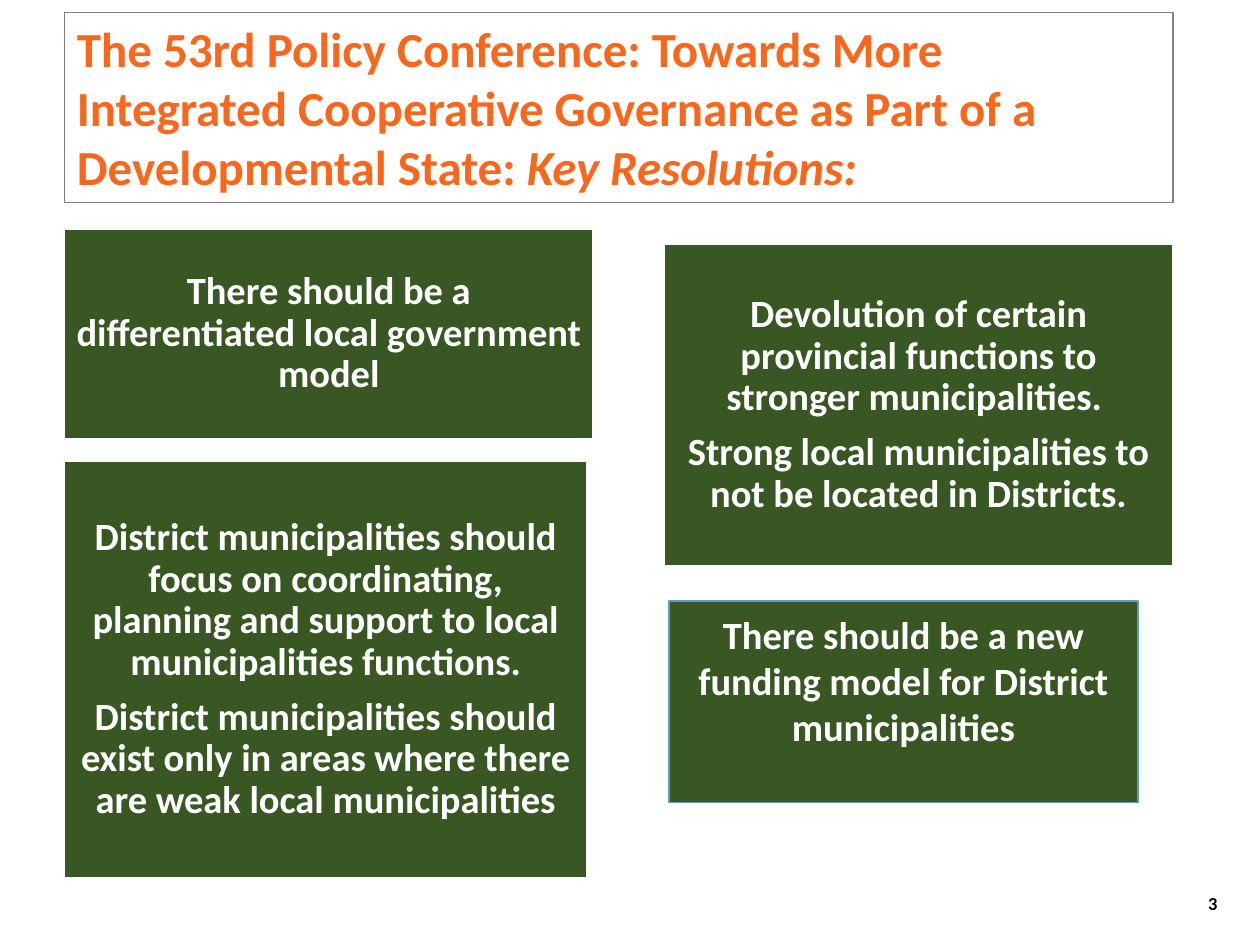
from dataclasses import dataclass

from pptx import Presentation
from pptx.dml.color import RGBColor
from pptx.enum.shapes import MSO_SHAPE
from pptx.enum.text import MSO_ANCHOR, MSO_AUTO_SIZE, PP_ALIGN
from pptx.util import Inches, Pt

RECTANGLE = MSO_SHAPE.RECTANGLE
TOP, MIDDLE = MSO_ANCHOR.TOP, MSO_ANCHOR.MIDDLE
LEFT, CENTER, RIGHT = PP_ALIGN.LEFT, PP_ALIGN.CENTER, PP_ALIGN.RIGHT
TITLE_ONLY = 5


@dataclass(frozen=True)
class Theme:
    font: str = "Calibri"
    title_size: float = 28
    body_size: float = 22
    number_size: float = 10.5
    orange: RGBColor = RGBColor(0xF9, 0x67, 0x1C)
    green: RGBColor = RGBColor(0x38, 0x57, 0x23)
    blue: RGBColor = RGBColor(0x5B, 0x9B, 0xD5)
    gray: RGBColor = RGBColor(0x80, 0x80, 0x80)
    white: RGBColor = RGBColor(0xFF, 0xFF, 0xFF)
    black: RGBColor = RGBColor(0, 0, 0)


THEME = Theme()
MARGIN = 0.51
RIGHT_COLUMN = 5.27

# Position (left, top, width, height) and paragraphs of each resolution
RESOLUTIONS = [
    ((MARGIN, 1.82, 4.2, 1.66),
     ["There should be a differentiated local government model"]),
    ((RIGHT_COLUMN, 1.94, 4.04, 2.55),
     ["Devolution of certain provincial functions to stronger municipalities. ",
      "Strong local municipalities to not be located in Districts."]),
    ((MARGIN, 3.66, 4.15, 3.31),
     ["District municipalities should focus on coordinating, planning and "
      "support to local municipalities functions.",
      "District municipalities should exist only in areas where there are "
      "weak local municipalities"]),
]
FUNDING = ((5.31, 4.77, 3.72, 1.6),
           ["There should be a new funding model for District municipalities"])


def add_span(para, text, size, color, italic=None):
    span = para.add_run()
    span.text = text
    font = span.font
    font.name, font.size, font.bold, font.italic = THEME.font, Pt(size), True, italic
    font.color.rgb = color


def set_frame(frame, anchor, inset=None):
    frame.word_wrap = True
    frame.auto_size = MSO_AUTO_SIZE.NONE
    frame.vertical_anchor = anchor
    if inset is not None:
        frame.margin_left = frame.margin_right = Inches(inset)
        frame.margin_top = frame.margin_bottom = Inches(inset)


def set_title(page):
    title = page.shapes.title
    title.left, title.top = Inches(MARGIN), Inches(0.1)
    title.width, title.height = Inches(8.8), Inches(1.51)
    title.line.color.rgb = THEME.gray
    title.line.width = Pt(0.75)
    set_frame(title.text_frame, TOP)
    para = title.text_frame.paragraphs[0]
    para.alignment = LEFT
    add_span(para, "The 53rd Policy Conference: Towards More Integrated Cooperative "
             "Governance as Part of a Developmental State: ",
             THEME.title_size, THEME.orange)
    add_span(para, "Key Resolutions:", THEME.title_size, THEME.orange, italic=True)


def add_resolution(page, place, texts, line_color=THEME.white, anchor=MIDDLE,
                   inset=0.09, line_spacing=0.9):
    box = page.shapes.add_shape(RECTANGLE, *map(Inches, place))
    box.shadow.inherit = False
    box.fill.solid()
    box.fill.fore_color.rgb = THEME.green
    box.line.color.rgb = line_color
    box.line.width = Pt(1)
    frame = box.text_frame
    set_frame(frame, anchor, inset)
    for index, text in enumerate(texts):
        para = frame.add_paragraph() if index else frame.paragraphs[0]
        para.alignment = CENTER
        para.line_spacing = line_spacing
        para.space_after = Pt(0.35 * THEME.body_size)
        add_span(para, text, THEME.body_size, THEME.white)


def add_page_number(page, number):
    box = page.shapes.add_textbox(*map(Inches, (9.31, 6.97, 0.45, 0.4)))
    set_frame(box.text_frame, MIDDLE)
    para = box.text_frame.paragraphs[0]
    para.alignment = RIGHT
    add_span(para, number, THEME.number_size, THEME.black)


def main():
    deck = Presentation()
    deck.slide_width, deck.slide_height = Inches(10), Inches(7.5)
    page = deck.slides.add_slide(deck.slide_layouts[TITLE_ONLY])
    set_title(page)
    for place, texts in RESOLUTIONS:
        add_resolution(page, place, texts)
    add_resolution(page, *FUNDING, line_color=THEME.blue, anchor=TOP,
                   inset=0.08, line_spacing=1.0)
    add_page_number(page, "3")
    deck.save("out.pptx")


if __name__ == "__main__":
    main()
